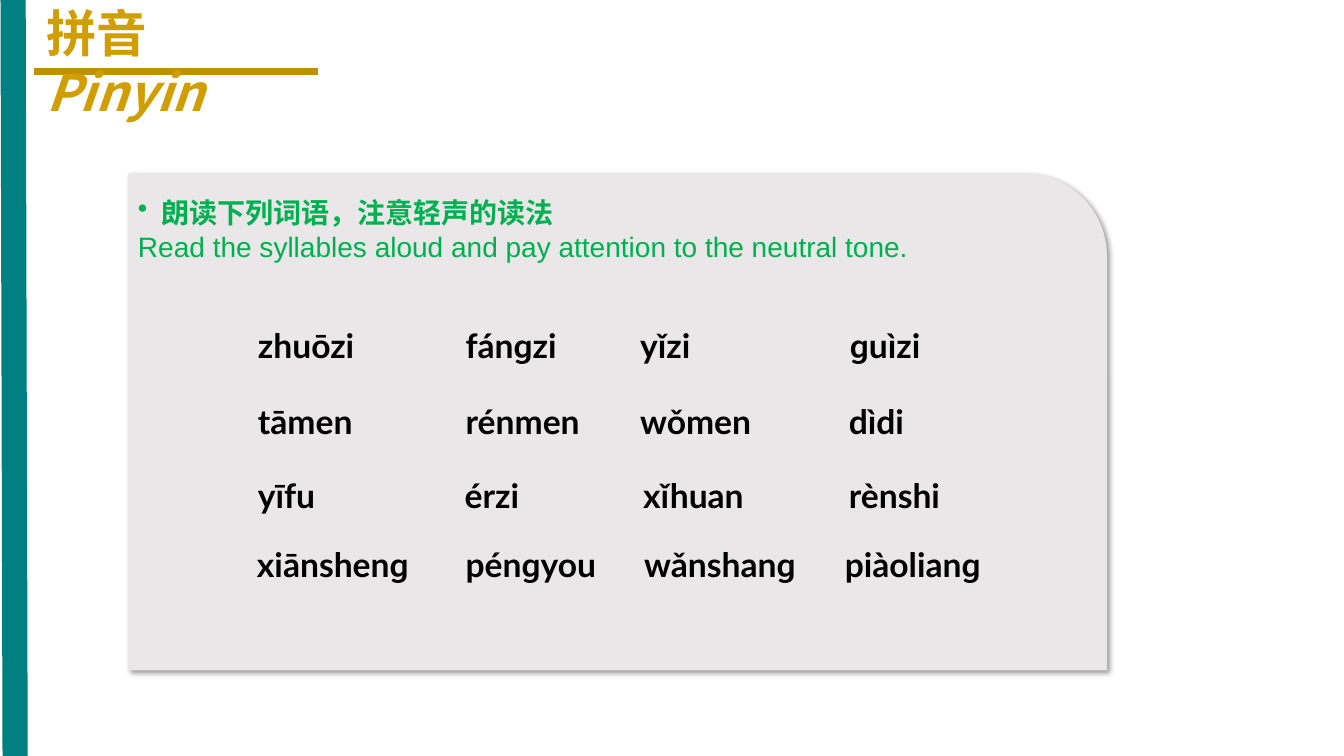
from dataclasses import dataclass

from lxml import etree
from pptx import Presentation
from pptx import util as u
from pptx.dml.color import RGBColor
from pptx.enum import shapes, text
from pptx.oxml.ns import qn

COLUMNS, ROWS = 1333, 750
CELL = u.Inches(0.01)
TEAL = RGBColor(0x00, 0x80, 0x80)
GOLD = RGBColor(0xD0, 0x9E, 0x00)
DARK_GOLD = RGBColor(0xBF, 0x90, 0x00)
GREEN = RGBColor(0x00, 0xB0, 0x50)
PALE_GREY = RGBColor(0xE9, 0xE7, 0xE7)
BLACK = RGBColor(0, 0, 0)
CJK = "Noto Sans CJK SC"


@dataclass(frozen=True)
class Area:
    column: int
    row: int
    columns: int
    rows: int

    def box(self) -> list[int]:
        return [n * CELL for n in (self.column, self.row, self.columns, self.rows)]


@dataclass(frozen=True)
class Rule:
    start: tuple[int, int]
    end: tuple[int, int]
    color: RGBColor
    weight: float


@dataclass(frozen=True)
class WordRow:
    row: int
    columns: tuple[int, ...]
    words: tuple[str, ...]


RULES = (
    Rule((15, 752), (13, 0), TEAL, 18),
    Rule((34, 71), (315, 71), DARK_GOLD, 5.5),
)
WORD_ROWS = (
    WordRow(317, (246, 452, 625, 833), ("zhuōzi", "fánɡzi", "yǐzi", "ɡuìzi")),
    WordRow(393, (246, 452, 625, 832), ("tāmen", "rénmen", "wǒmen", "dìdi")),
    WordRow(466, (246, 451, 628, 832), ("yīfu", "érzi", "xǐhuan", "rènshi")),
    WordRow(535, (245, 452, 629, 828), ("xiānshenɡ", "pénɡyou", "wǎnshanɡ", "piàolianɡ")),
)


def style(paragraph, face: str, size: int, color: RGBColor, bold: bool = True) -> None:
    font = paragraph.font
    font.name, font.size, font.bold = face, u.Pt(size), bold
    font.color.rgb = color


def set_east_asian(run) -> None:
    etree.SubElement(run._r.get_or_add_rPr(), qn("a:ea"), typeface=CJK)


def draw_rule(slide, rule: Rule) -> None:
    ends = [n * CELL for n in rule.start + rule.end]
    line = slide.shapes.add_connector(shapes.MSO_CONNECTOR.STRAIGHT, *ends)
    line.line.color.rgb = rule.color
    line.line.width = u.Pt(rule.weight)
    etree.SubElement(line._element.spPr, qn("a:effectLst"))


def draw_title(slide) -> None:
    frame = slide.shapes.add_textbox(*Area(36, 1, 279, 71).box()).text_frame
    frame.word_wrap = True
    title = frame.paragraphs[0]
    title.line_spacing = 0.97
    style(title, CJK, 36, GOLD)
    chinese = title.add_run()
    chinese.text = "拼音"
    title.add_line_break()
    english = title.add_run()
    english.text = "Pinyin"
    english.font.italic = True
    for run in title.runs:
        set_east_asian(run)


def draw_rounded(slide, area: Area):
    rounded = slide.shapes.add_shape(shapes.MSO_SHAPE.ROUND_1_RECTANGLE, *area.box())
    rounded.shadow.inherit = False
    rounded.line.fill.background()
    return rounded


def draw_panel(slide) -> None:
    panel = draw_rounded(slide, Area(127, 172, 971, 493))
    panel.fill.solid()
    panel.fill.fore_color.rgb = PALE_GREY
    effects = panel._element.spPr.find(qn("a:effectLst"))
    shadow = etree.SubElement(
        effects, qn("a:outerShdw"), blurRad=str(u.Pt(4)), dist=str(u.Pt(3)),
        dir="2700000", algn="tl", rotWithShape="0",
    )
    shade = etree.SubElement(shadow, qn("a:srgbClr"), val=str(BLACK))
    etree.SubElement(shade, qn("a:alpha"), val="40000")


def draw_instruction(slide) -> None:
    instruction = draw_rounded(slide, Area(127, 189, 971, 99))
    instruction.fill.background()
    frame = instruction.text_frame
    frame.word_wrap = True
    frame.vertical_anchor = text.MSO_ANCHOR.TOP
    frame.text = (
        "朗读下列词语，注意轻声的读法\n"
        "Read the syllables aloud and pay attention to the neutral tone."
    )
    chinese, english = frame.paragraphs
    for paragraph, bold in ((chinese, True), (english, False)):
        paragraph.alignment = text.PP_ALIGN.LEFT
        style(paragraph, "Arial", 20, GREEN, bold)
    set_east_asian(chinese.runs[0])
    properties = chinese._p.get_or_add_pPr()
    indent = u.Inches(0.23)
    properties.set("marL", str(indent))
    properties.set("indent", str(-indent))
    bullet = etree.Element(qn("a:buChar"), char="•")
    properties.find(qn("a:defRPr")).addprevious(bullet)


def draw_words(slide, line: WordRow) -> None:
    for column, word in zip(line.columns, line.words):
        frame = slide.shapes.add_textbox(*Area(column, line.row, 261, 51).box()).text_frame
        frame.word_wrap = True
        frame.text = word
        style(frame.paragraphs[0], "Lato", 24, BLACK)


def main() -> None:
    deck = Presentation()
    deck.slide_width, deck.slide_height = COLUMNS * CELL, ROWS * CELL
    slide = deck.slides.add_slide(deck.slide_layouts[6])
    for rule in RULES:
        draw_rule(slide, rule)
    draw_title(slide)
    draw_panel(slide)
    draw_instruction(slide)
    for line in WORD_ROWS:
        draw_words(slide, line)
    deck.save("out.pptx")


if __name__ == "__main__":
    main()
